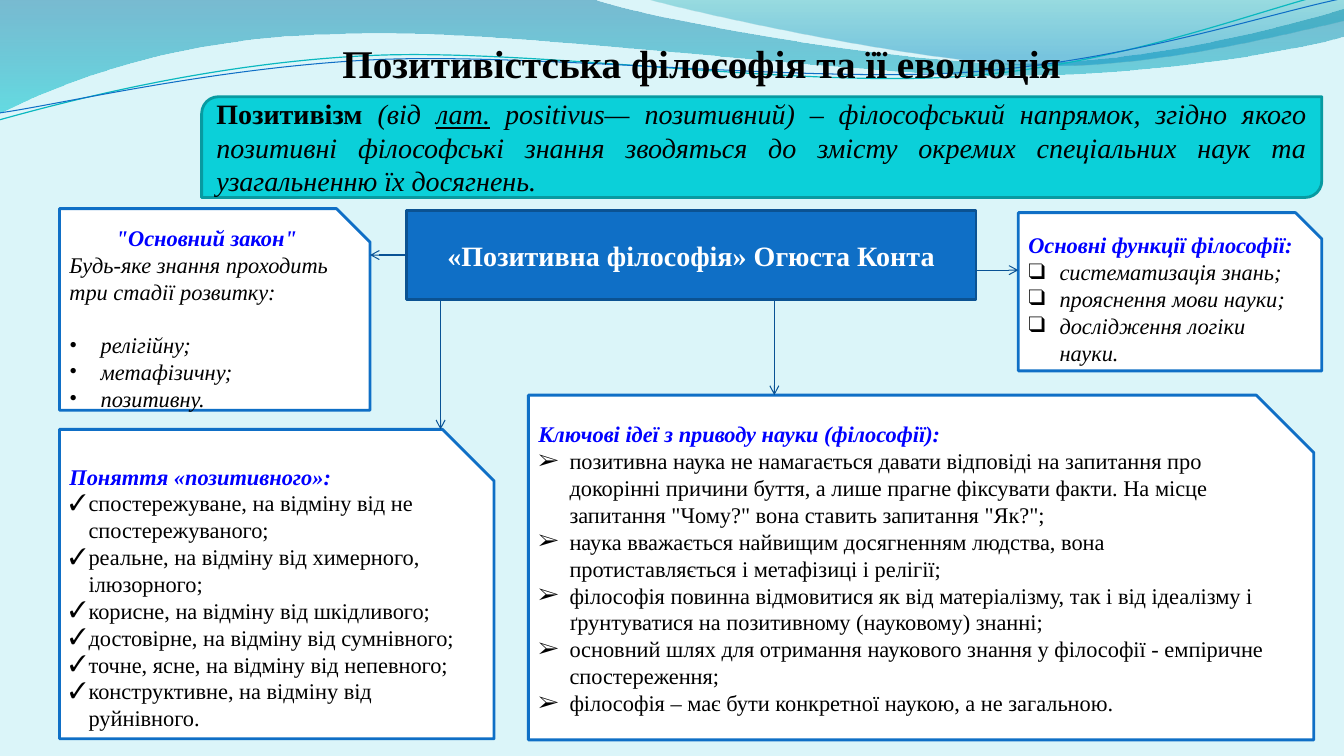
import pptx
import pptx.util
import pptx.dml.color
import pptx.enum.shapes
import pptx.enum.text
import pptx.oxml
import pptx.oxml.ns
import lxml.etree

Inches = pptx.util.Inches
SHAPES = pptx.enum.shapes.MSO_SHAPE
ALIGN = pptx.enum.text.PP_ALIGN
MIDDLE = pptx.enum.text.MSO_ANCHOR.MIDDLE
qn = pptx.oxml.ns.qn

COLORS = {
    "background": "DBF5F9", "black": "000000", "white": "FFFFFF", "heading": "0000FF",
    "blue": "0F6FC6", "blue edge": "0B5292", "cyan": "0BD0D9", "cyan edge": "089AA1",
    "arrow": "095295", "teal line": "0AB8BF", "deep blue": "0074A1", "aqua": "00C6CF",
    "teal": "00A1A9", "sky": "008BBF",
}


class SlideBuilder:
    font_name = "Times New Roman"

    def __init__(self, slide):
        self.slide = slide
        self.shapes = slide.shapes
        slide.background.fill.solid()
        slide.background.fill.fore_color.rgb = self.color("background")

    def color(self, name):
        return pptx.dml.color.RGBColor.from_string(COLORS[name])

    def outline(self, line, color, width):
        line.color.rgb = self.color(color)
        line.width = pptx.util.Pt(width)

    def add_run(self, paragraph, text, size, color="black", bold=False, italic=False,
                underline=False):
        run = paragraph.add_run()
        run.text = text
        font = run.font
        font.name, font.size = self.font_name, pptx.util.Pt(size)
        font.bold, font.italic, font.underline = bold, italic, underline
        font.color.rgb = self.color(color)

    def add_bullet(self, paragraph, character, indent):
        properties = paragraph._p.get_or_add_pPr()
        properties.set("marL", str(Inches(indent)))
        properties.set("indent", str(-Inches(indent)))
        lxml.etree.SubElement(properties, qn("a:buFont")).set("typeface", self.font_name)
        lxml.etree.SubElement(properties, qn("a:buChar")).set("char", character)

    def title(self, text, left, top, width, height):
        title = self.shapes.title
        title.left, title.top = Inches(left), Inches(top)
        title.width, title.height = Inches(width), Inches(height)
        title.text_frame.vertical_anchor = MIDDLE
        paragraph = title.text_frame.paragraphs[0]
        paragraph.alignment = ALIGN.CENTER
        self.add_run(paragraph, text, 28, bold=True)
        # Bring the title in front of the waves
        title.element.getparent().append(title.element)

    def freeform(self, start, segments, closed):
        """Outline of lines (x, y) and cubic curves (x1, y1, x2, y2, x3, y3)."""
        points = [(Inches(segment[i]), Inches(segment[i + 1]))
                  for segment in segments for i in range(0, len(segment), 2)]
        builder = self.shapes.build_freeform(Inches(start[0]), Inches(start[1]))
        builder.add_line_segments(points, close=closed)
        shape = builder.convert_to_shape()
        shape.shadow.inherit = False
        # Join each three points of a curve into one cubic segment
        steps = iter(list(shape.element.iter(qn("a:lnTo"))))
        for segment in segments:
            first = next(steps)
            if len(segment) == 6:
                first.tag = qn("a:cubicBezTo")
                for _ in range(2):
                    step = next(steps)
                    first.append(step[0])
                    step.getparent().remove(step)
        return shape

    def wave(self, start, segments, stops):
        shape = self.freeform(start, segments, True)
        shape.line.fill.background()
        shape.fill.gradient()
        shape.fill.gradient_angle = 270
        for stop, (position, color, alpha) in zip(shape.fill.gradient_stops, stops):
            stop.position = position
            stop.color.rgb = self.color(color)
        for element, (position, color, alpha) in zip(shape.element.iter(qn("a:srgbClr")), stops):
            lxml.etree.SubElement(element, qn("a:alpha")).set("val", str(alpha * 1000))

    def wave_line(self, start, segments, color, width):
        shape = self.freeform(start, segments, False)
        shape.fill.background()
        self.outline(shape.line, color, width)

    def box(self, kind, left, top, width, height, fill="white", edge="blue"):
        shape = self.shapes.add_shape(kind, Inches(left), Inches(top),
                                      Inches(width), Inches(height))
        shape.shadow.inherit = False
        shape.fill.solid()
        shape.fill.fore_color.rgb = self.color(fill)
        self.outline(shape.line, edge, 2)
        shape.text_frame.word_wrap = True
        shape.text_frame.vertical_anchor = MIDDLE
        return shape

    def card(self, place, heading, bullet, indent, items, italic=False, intro=None,
             heading_align=ALIGN.LEFT):
        shape = self.box(SHAPES.SNIP_1_RECTANGLE, *place)
        frame = shape.text_frame
        paragraph = frame.paragraphs[0]
        paragraph.alignment = heading_align
        self.add_run(paragraph, heading, 16, "heading", bold=True, italic=True)
        if intro:
            paragraph = frame.add_paragraph()
            paragraph.alignment = ALIGN.LEFT
            paragraph.space_after = pptx.util.Pt(19)
            self.add_run(paragraph, intro, 16, italic=italic)
        for item in items:
            paragraph = frame.add_paragraph()
            paragraph.alignment = ALIGN.LEFT
            self.add_bullet(paragraph, bullet, indent)
            self.add_run(paragraph, item, 16, italic=italic)
        return shape

    def arrow(self, start, end, source=None, site=None):
        connector = self.shapes.add_connector(
            pptx.enum.shapes.MSO_CONNECTOR.STRAIGHT, *(Inches(value) for value in start + end))
        if source is not None:
            connector.begin_connect(source, site)
        self.outline(connector.line, "arrow", 0.75)
        line = connector.line._get_or_add_ln()
        lxml.etree.SubElement(line, qn("a:tailEnd")).set("type", "arrow")
        lxml.etree.SubElement(connector.element.spPr, qn("a:effectLst"))


def main():
    presentation = pptx.Presentation()
    presentation.slide_width, presentation.slide_height = Inches(13.33), Inches(7.5)
    builder = SlideBuilder(presentation.slides.add_slide(presentation.slide_layouts[5]))

    # Waves along the top
    builder.wave((0, 0), [(5.87, -0.01),
                          (6.34, 0.17, 8.85, 0.63, 10.11, 0.63),
                          (11.38, 0.63, 12.78, 0.26, 13.33, 0.09),
                          (13.35, 0.36),
                          (13.11, 0.44, 11.6, 0.76, 9.94, 0.75),
                          (8.29, 0.75, 5.09, 0.28, 3.43, 0.34),
                          (1.72, 0.36, 0.61, 0.83, -0.01, 1.13)],
                 [(0, "deep blue", 45), (1, "aqua", 55)])
    builder.wave((6.39, -0.01), [(6.79, 0.11, 9.09, 0.62, 10.25, 0.65),
                                 (11.41, 0.69, 12.82, 0.32, 13.33, 0.21),
                                 (13.33, 0)],
                 [(0, "teal", 30), (0.8, "sky", 45)])
    builder.wave_line((-0.01, 1.19), [(0.64, 1.01, 2.11, 0.62, 3.69, 0.55),
                                      (5.27, 0.48, 7.9, 0.87, 9.5, 0.76),
                                      (11.1, 0.66, 12.52, 0.08, 13.31, -0.1)], "teal line", 0.85)
    builder.wave_line((0, 1.12), [(0.63, 1.03, 2.18, 0.66, 3.78, 0.59),
                                  (5.37, 0.53, 7.96, 0.82, 9.55, 0.72),
                                  (11.15, 0.62, 12.55, 0.14, 13.34, -0.02)], "blue", 0.75)

    builder.title("Позитивістська філософія та її еволюція", 1.2, 0.34, 11.52, 0.57)

    # Definition
    definition = builder.box(SHAPES.ROUND_2_DIAG_RECTANGLE, 2, 0.96, 11.11, 1, "cyan", "cyan edge")
    paragraph = definition.text_frame.paragraphs[0]
    paragraph.alignment = ALIGN.JUSTIFY
    builder.add_run(paragraph, "Позитивізм ", 20, bold=True)
    builder.add_run(paragraph, "(від ", 20, italic=True)
    builder.add_run(paragraph, "лат.", 20, italic=True, underline=True)
    builder.add_run(paragraph, " positivus— позитивний) – філософський напрямок, згідно якого "
                    "позитивні філософські знання зводяться до змісту окремих спеціальних наук "
                    "та узагальненню їх досягнень.", 20, italic=True)

    # Central topic
    topic = builder.box(SHAPES.RECTANGLE, 4.03, 2.09, 5.65, 0.88, "blue", "blue edge")
    paragraph = topic.text_frame.paragraphs[0]
    paragraph.alignment = ALIGN.CENTER
    builder.add_run(paragraph, "«Позитивна філософія» Огюста Конта", 20, "white", bold=True)

    # Cards around the topic
    builder.card((0.59, 4.26, 4.31, 3.07), "Поняття «позитивного»:", "✓", 0.19, [
        "спостережуване, на відміну від не спостережуваного;",
        "реальне, на відміну від химерного, ілюзорного;",
        "корисне, на відміну від шкідливого;",
        "достовірне, на відміну від сумнівного;",
        "точне, ясне, на відміну від непевного;",
        "конструктивне, на відміну від руйнівного."])
    builder.card((0.59, 2.07, 3.08, 2), "\"Основний закон\"", "•", 0.31,
                 ["релігійну;", "метафізичну;", "позитивну."], italic=True,
                 intro="Будь-яке знання проходить три стадії розвитку:",
                 heading_align=ALIGN.CENTER)
    builder.card((10.1, 2.11, 3.01, 1.57), "Основні функції філософії:", "❑", 0.31,
                 ["систематизація знань;", "прояснення мови науки;", "дослідження логіки науки."],
                 italic=True)
    ideas = builder.card((5.24, 3.92, 7.79, 3.42), "Ключові ідеї з приводу науки (філософії):",
                         "➢", 0.31, [
        "позитивна наука не намагається давати відповіді на запитання про докорінні причини "
        "буття, а лише прагне фіксувати факти. На місце запитання \"Чому?\" вона ставить "
        "запитання \"Як?\";",
        "наука вважається найвищим досягненням людства, вона протиставляється і метафізиці "
        "і релігії;",
        "філософія повинна відмовитися як від матеріалізму, так і від ідеалізму і ґрунтуватися "
        "на позитивному (науковому) знанні;",
        "основний шлях для отримання наукового знання у філософії - емпіричне спостереження;",
        "філософія – має бути конкретної наукою, а не загальною."])
    ideas.text_frame.margin_bottom = Inches(0.32)

    # Arrows from the topic to the cards
    builder.arrow((7.68, 2.97), (7.68, 3.92))
    builder.arrow((4.37, 2.97), (4.37, 4.26))
    builder.arrow((4.03, 2.53), (3.67, 2.53), topic, 1)
    builder.arrow((9.68, 2.68), (10.1, 2.68))

    presentation.save("out.pptx")


if __name__ == "__main__":
    main()
